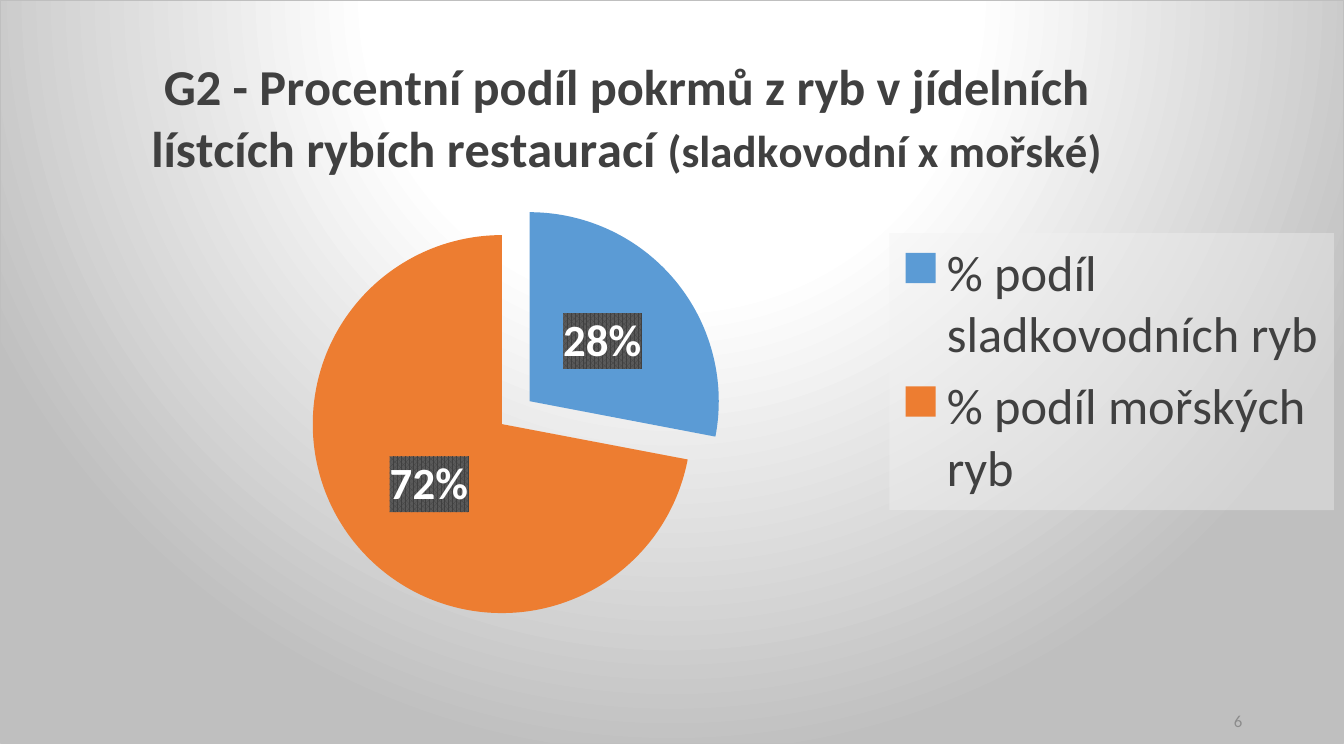
from lxml import etree
from pptx import Presentation
from pptx.chart.data import CategoryChartData
from pptx.dml.color import RGBColor
from pptx.enum.chart import XL_CHART_TYPE, XL_LABEL_POSITION as LabelPosition, XL_LEGEND_POSITION as LegendPosition
from pptx.enum.text import MSO_ANCHOR, PP_ALIGN
from pptx.oxml import parse_xml
from pptx.oxml.ns import nsdecls, qn
from pptx.util import Inches, Pt

WIDTH, HEIGHT = 13.33, 7.5
FONT = "Calibri"
TEXT_COLOR = "404040"
TITLE_LINES = [
    [("G2 - Procentní podíl pokrmů z ryb v jídelních", 36)],
    [("lístcích rybích restaurací ", 36), ("(sladkovodní x mořské)", 32)],
]
# category, share, colour, explosion
SLICES = [
    ("% podíl sladkovodních ryb", 28, "5B9BD5", 0),
    ("% podíl mořských ryb", 72, "ED7D31", 19),
]
SERIES_EXPLOSION = 81


def color(value):
    return RGBColor.from_string(value)


def style(font, **values):
    for name, value in {"name": FONT, **values}.items():
        if name == "color":
            font.color.rgb = color(value)
        else:
            setattr(font, name, Pt(value) if name == "size" else value)


def solid(value, alpha=100):
    return (f'<a:solidFill><a:srgbClr val="{value}"><a:alpha val="{alpha * 1000}"/>'
            '</a:srgbClr></a:solidFill>')


def insert_after(parent, tag, child):
    """Puts child behind the named part, or first when no part is named."""
    index = parent.index(parent.find(qn(tag))) + 1 if tag else 0
    parent.insert(index, child)


def shape_properties(content):
    return parse_xml(f'<c:spPr {nsdecls("c", "a")}>{content}</c:spPr>')


def set_layout(parent, after, **shares):
    """Places a chart part by shares of the chart's size."""
    for old in parent.findall(qn("c:layout")):
        parent.remove(old)
    layout = parse_xml(f'<c:layout {nsdecls("c")}><c:manualLayout/></c:layout>')
    manual = layout[0]
    if after is None:
        etree.SubElement(manual, qn("c:layoutTarget")).set("val", "inner")
    for axis in "xy":
        etree.SubElement(manual, qn(f"c:{axis}Mode")).set("val", "edge")
    for name, share in shares.items():
        etree.SubElement(manual, qn(f"c:{name}")).set("val", str(share))
    insert_after(parent, after, layout)


def explosion(amount):
    return parse_xml(f'<c:explosion {nsdecls("c")} val="{amount}"/>')


def add_title(chart):
    chart.has_title = True
    title = chart.chart_title
    frame = title.text_frame
    for number, line in enumerate(TITLE_LINES):
        paragraph = frame.add_paragraph() if number else frame.paragraphs[0]
        paragraph.alignment = PP_ALIGN.CENTER
        for text, size in line:
            run = paragraph.add_run()
            run.text = text
            style(run.font, size=size, bold=True, color=TEXT_COLOR)
    set_layout(chart.element.find(f".//{qn('c:title')}"), "c:tx", x=0.11, y=0.07)


def add_legend(chart):
    chart.has_legend = True
    legend = chart.legend
    legend.position = LegendPosition.RIGHT
    legend.include_in_layout = False
    style(legend.font, size=36, color=TEXT_COLOR)
    element = chart.element.find(f".//{qn('c:legend')}")
    set_layout(element, "c:legendPos", x=0.662, y=0.313, w=0.331, h=0.373)
    insert_after(element, "c:overlay", shape_properties(solid("F2F2F2", 39)))


def format_slices(chart):
    plot = chart.plots[0]
    plot.vary_by_categories = True
    series = plot.series[0]
    for number, (_, _, fill_color, amount) in enumerate(SLICES):
        point_format = series.points[number].format
        point_format.fill.solid()
        point_format.fill.fore_color.rgb = color(fill_color)
    points = chart.element.findall(f".//{qn('c:dPt')}")
    for point, (_, _, _, amount) in zip(points, SLICES):
        point.find(qn("c:spPr")).addprevious(explosion(amount))
    points[0].addprevious(explosion(SERIES_EXPLOSION))

    # Percent labels on a dark pattern
    labels = series.data_labels
    settings = {"show_percentage": True, "show_value": False, "number_format": "0%",
                "number_format_is_linked": False, "position": LabelPosition.CENTER}
    for name, value in settings.items():
        setattr(labels, name, value)
    style(labels.font, size=32, bold=True, color="FFFFFF")
    pattern = ('<a:pattFill prst="pct75"><a:fgClr><a:srgbClr val="404040"/></a:fgClr>'
               '<a:bgClr><a:srgbClr val="595959"/></a:bgClr></a:pattFill>')
    insert_after(chart.element.find(f".//{qn('c:dLbls')}"), "c:numFmt", shape_properties(pattern))


def add_background(chart):
    stops = "".join(f'<a:gs pos="{position * 1000}"><a:srgbClr val="{value}"/></a:gs>'
                    for position, value in [(0, "FFFFFF"), (39, "FFFFFF"), (100, "BFBFBF")])
    gradient = (f'<a:gradFill><a:gsLst>{stops}</a:gsLst><a:path path="circle">'
                '<a:fillToRect l="50000" t="-80000" r="50000" b="180000"/></a:path></a:gradFill>')
    border = f'<a:ln w="{Pt(0.75)}">{solid("BFBFBF")}</a:ln>'
    insert_after(chart.element, "c:chart", shape_properties(gradient + border))


def add_share_chart(slide, left, top, width, height):
    data = CategoryChartData()
    data.categories = [name for name, *_ in SLICES]
    data.add_series("Series 1", [share for _, share, *_ in SLICES])
    box = [Inches(length) for length in (left, top, width, height)]
    chart = slide.shapes.add_chart(XL_CHART_TYPE.PIE, *box, data).chart
    style(chart.font, size=10, color="000000")
    add_title(chart)
    add_legend(chart)
    format_slices(chart)
    set_layout(chart.element.find(f".//{qn('c:plotArea')}"), None, x=0.139, y=0.079, w=0.51, h=0.921)
    add_background(chart)


def add_page_number(slide, left, top, width, height):
    box = [Inches(length) for length in (left, top, width, height)]
    frame = slide.shapes.add_textbox(*box).text_frame
    frame.word_wrap = True
    frame.vertical_anchor = MSO_ANCHOR.MIDDLE
    paragraph = frame.paragraphs[0]
    paragraph.alignment = PP_ALIGN.RIGHT
    run = paragraph.add_run()
    run.text = "6"
    style(run.font, size=12, color="8C8C8C")


def main():
    presentation = Presentation()
    presentation.slide_width, presentation.slide_height = Inches(WIDTH), Inches(HEIGHT)
    slide = presentation.slides.add_slide(presentation.slide_layouts[6])
    add_share_chart(slide, 0, 0, WIDTH, 7.38)
    add_page_number(slide, 9.42, 6.95, 3, 0.4)
    presentation.save("out.pptx")


if __name__ == "__main__":
    main()
